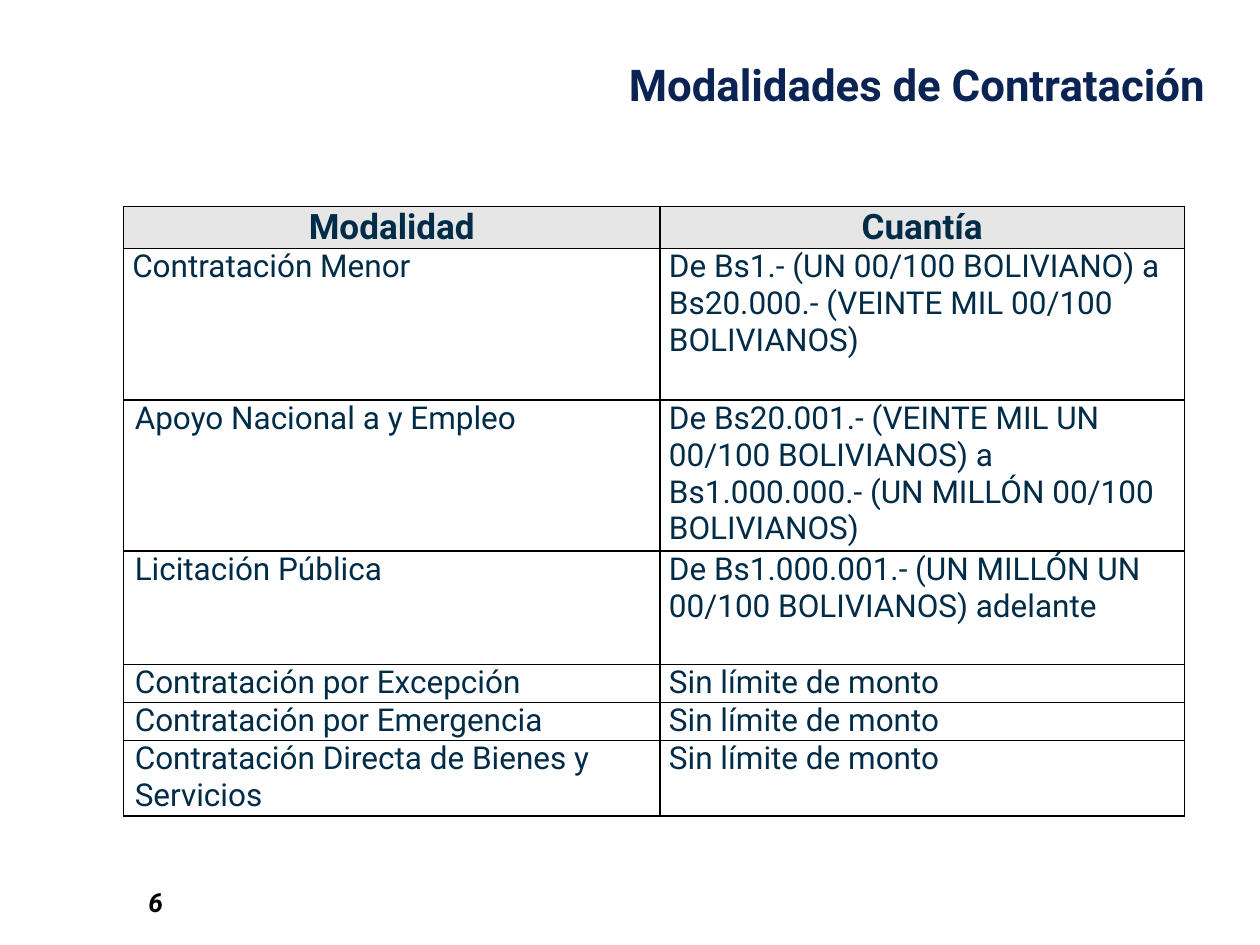
from dataclasses import dataclass
from typing import Any

from lxml.etree import SubElement
from pptx import Presentation
from pptx.dml.color import RGBColor
from pptx.enum.text import MSO_ANCHOR as Anchor, PP_ALIGN as Align
from pptx.oxml.ns import qn
from pptx.util import Inches, Pt

NAVY = RGBColor(0x0B, 0x24, 0x53)
INK = RGBColor(0x00, 0x2C, 0x48)
BLACK = RGBColor(0x00, 0x00, 0x00)
HEADER_GREY = RGBColor(0xE6, 0xE6, 0xE6)
WHITE = RGBColor(0xFF, 0xFF, 0xFF)

# The slide is laid out on a grid of 100 columns by 75 rows
GRID_COLUMNS, GRID_ROWS = 100, 75

HEADINGS = ("Modalidad", "Cuantía")
NO_LIMIT = "Sin límite de monto"
# Contract type, amount, row height in grid rows
MODALITIES = [
    ("Contratación Menor",
     "De Bs1.- (UN 00/100 BOLIVIANO) a Bs20.000.- (VEINTE MIL 00/100 BOLIVIANOS)", 12),
    ("Apoyo Nacional a y Empleo",
     "De Bs20.001.- (VEINTE MIL UN 00/100 BOLIVIANOS) a "
     "Bs1.000.000.- (UN MILLÓN 00/100 BOLIVIANOS)", 12),
    ("Licitación Pública",
     "De Bs1.000.001.- (UN MILLÓN UN 00/100 BOLIVIANOS) adelante", 9),
    ("Contratación por Excepción", NO_LIMIT, 3),
    ("Contratación por Emergencia", NO_LIMIT, 3),
    ("Contratación Directa de Bienes y Servicios", NO_LIMIT, 6),
]


@dataclass
class SlideBuilder:
    deck: Any
    slide: Any
    font_name: str = "Roboto"
    border_width: float = 1

    def across(self, columns):
        return round(self.deck.slide_width * columns / GRID_COLUMNS)

    def down(self, rows):
        return round(self.deck.slide_height * rows / GRID_ROWS)

    def area(self, left, top, width, height):
        return self.across(left), self.down(top), self.across(width), self.down(height)

    def add_words(self, frame, text, size, color, bold=False, italic=False,
                  align=Align.LEFT, indent=0):
        paragraph = frame.paragraphs[0]
        paragraph.alignment = align
        if indent:
            properties = paragraph._p.get_or_add_pPr()
            properties.set("marL", str(self.across(indent)))
            properties.set("indent", "0")
        run = paragraph.add_run()
        run.text = text
        font = run.font
        font.name, font.size, font.bold, font.italic = self.font_name, Pt(size), bold, italic
        font.color.rgb = color

    def text(self, area, text, size, color, anchor, **style):
        frame = self.slide.shapes.add_textbox(*self.area(*area)).text_frame
        frame.word_wrap = True
        frame.vertical_anchor = anchor
        self.add_words(frame, text, size, color, **style)

    def cell(self, cell, text, size, fill, **style):
        cell.margin_left = cell.margin_right = Inches(0.07)
        cell.margin_top = cell.margin_bottom = 0
        # Borders come before the fill in the cell properties
        properties = cell._tc.get_or_add_tcPr()
        for side in ("lnL", "lnR", "lnT", "lnB"):
            line = SubElement(properties, qn(f"a:{side}"), w=str(Pt(self.border_width)))
            paint = SubElement(line, qn("a:solidFill"))
            SubElement(paint, qn("a:srgbClr"), val=str(BLACK))
        cell.fill.solid()
        cell.fill.fore_color.rgb = fill
        self.add_words(cell.text_frame, text, size, INK, **style)

    def table(self, left, top, widths, header_height, headings, records):
        heights = [header_height] + [height for _, _, height in records]
        area = self.area(left, top, sum(widths), sum(heights))
        table = self.slide.shapes.add_table(len(heights), len(widths), *area).table
        table.first_row = table.horz_banding = False
        for column, width in zip(table.columns, widths):
            column.width = self.across(width)
        for row, height in zip(table.rows, heights):
            row.height = self.down(height)

        for column, heading in enumerate(headings):
            self.cell(table.cell(0, column), heading, 20, HEADER_GREY,
                      bold=True, align=Align.CENTER)
        for row, (modality, amount, _) in enumerate(records, 1):
            # Every type after the first is set slightly in
            self.cell(table.cell(row, 0), modality, 18, WHITE,
                      indent=0.2 if row > 1 else 0)
            self.cell(table.cell(row, 1), amount, 18, WHITE)


def main():
    deck = Presentation()
    deck.slide_width, deck.slide_height = Inches(10), Inches(7.5)
    builder = SlideBuilder(deck, deck.slides.add_slide(deck.slide_layouts[6]))

    # Title
    builder.text((30.8, 1.7, 65.8, 10), "Modalidades de Contratación", 25, NAVY,
                 Anchor.MIDDLE, bold=True, align=Align.RIGHT)

    # Contract types and their amounts
    builder.table(9.8, 16.4, (42.6, 41.6), 3.3, HEADINGS, MODALITIES)

    # Page number
    builder.text((10.8, 68.3, 23.3, 5), "6", 15, BLACK, Anchor.BOTTOM,
                 bold=True, italic=True)

    deck.save("out.pptx")


if __name__ == "__main__":
    main()
